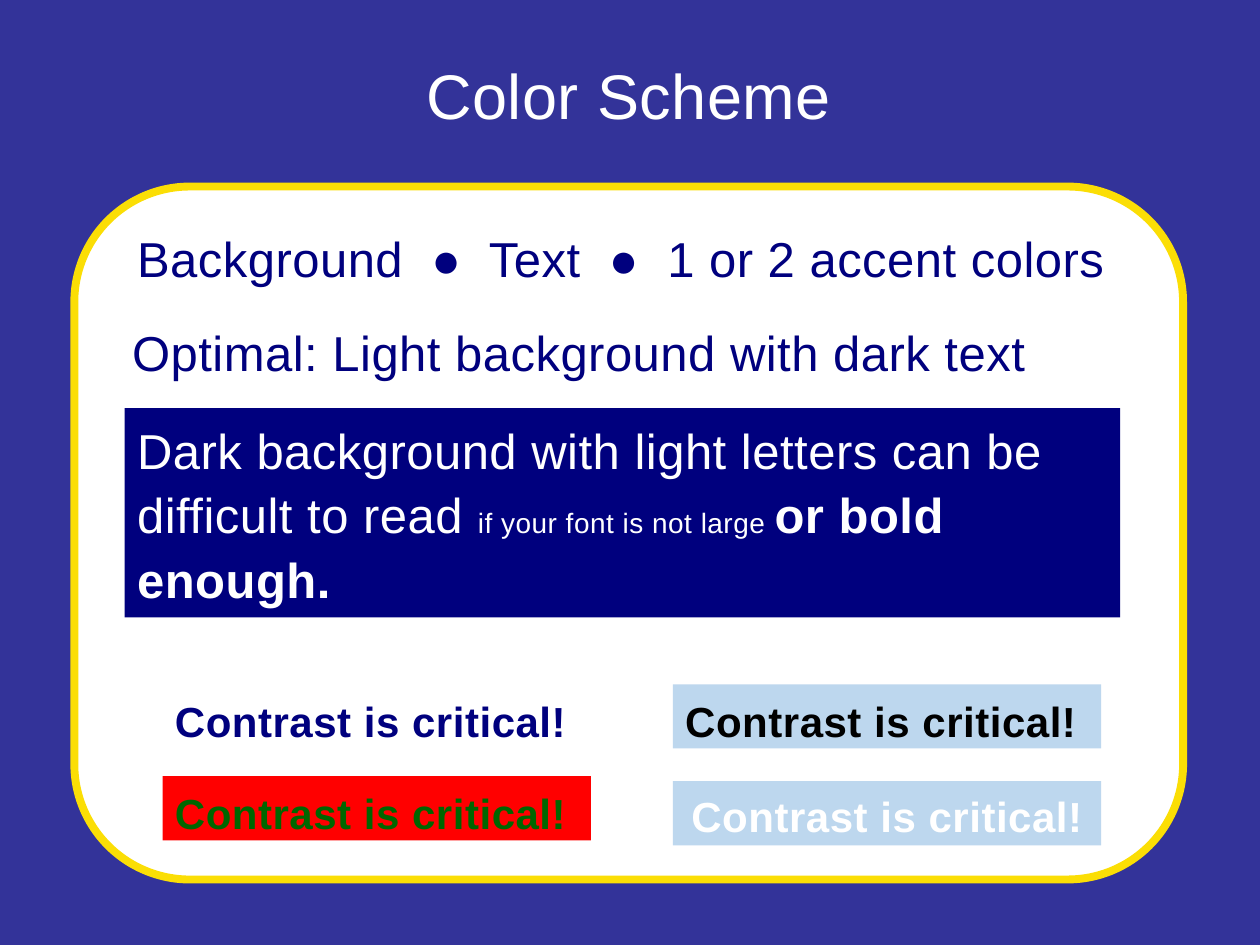
from pptx import Presentation
from pptx.dml.color import RGBColor
from pptx.enum.shapes import MSO_SHAPE
from pptx.enum.text import MSO_ANCHOR, MSO_AUTO_SIZE, PP_ALIGN
from pptx.util import Pt

BLUE = RGBColor(0x33, 0x33, 0x99)
NAVY = RGBColor(0x00, 0x00, 0x7E)
WHITE = RGBColor(0xFF, 0xFF, 0xFF)
BLACK = RGBColor(0x00, 0x00, 0x00)
GOLD = RGBColor(0xFB, 0xDE, 0x05)
RED = RGBColor(0xFF, 0x00, 0x00)
GREEN = RGBColor(0x00, 0x66, 0x00)
PALE = RGBColor(0xBD, 0xD7, 0xEE)

TITLE = "Color Scheme"
LINES = [
    ("Background  ●  Text  ●  1 or 2 accent colors", (71.3, 123.8, 576, 44.6)),
    ("Optimal: Light background with dark text", (68.4, 177.1, 568.8, 44.6)),
]
DARK = [
    ("Dark background with light letters can be difficult to read ", 28, False),
    ("if your font is not large ", 16, False),
    ("or bold enough.", 28, True),
]
CLAIM = "Contrast is critical!"
LEFT, RIGHT = 92.9, 384.5
TESTS = [
    (LEFT, 391, None, NAVY, False),
    (LEFT, 443.5, RED, GREEN, False),
    (RIGHT, 391, PALE, BLACK, False),
    (RIGHT, 446.4, PALE, WHITE, True),
]


def add_box(slide, spot, fill=None, kind=MSO_SHAPE.RECTANGLE):
    place = [Pt(n) for n in spot]
    if fill is None:
        return slide.shapes.add_textbox(*place)
    box = slide.shapes.add_shape(kind, *place)
    box.shadow.inherit = False
    box.fill.solid()
    box.fill.fore_color.rgb = fill
    box.line.fill.background()
    return box


def write(box, runs, ink, gap, space=1.1, mid=False, deep=False):
    frame = box.text_frame
    frame.word_wrap = True
    frame.auto_size = MSO_AUTO_SIZE.SHAPE_TO_FIT_TEXT
    frame.vertical_anchor = MSO_ANCHOR.MIDDLE if deep else MSO_ANCHOR.TOP
    para = frame.paragraphs[0]
    para.alignment = PP_ALIGN.CENTER if mid else PP_ALIGN.LEFT
    para.space_before = Pt(gap)
    para.line_spacing = space
    for text, size, bold in runs:
        run = para.add_run()
        run.text = text
        font = run.font
        font.name = "Arial"
        font.size = Pt(size)
        font.bold = bold
        font.color.rgb = ink
        run._r.get_or_add_rPr().set("spc", "30")


def main():
    deck = Presentation()
    deck.slide_width, deck.slide_height = Pt(720), Pt(540)
    slide = deck.slides.add_slide(deck.slide_layouts[6])
    slide.background.fill.solid()
    slide.background.fill.fore_color.rgb = BLUE

    title = add_box(slide, (100.1, 28.8, 518.4, 51.1))
    write(title, [(TITLE, 36, False)], WHITE, 6, 1.0, mid=True)

    panel = add_box(slide, (42.5, 106.6, 633.6, 396), WHITE,
                    MSO_SHAPE.ROUNDED_RECTANGLE)
    panel.line.color.rgb = GOLD
    panel.line.width = Pt(4.5)

    for text, spot in LINES:
        write(add_box(slide, spot), [(text, 28, False)], NAVY, 18)

    dark = add_box(slide, (71.3, 233.3, 568.8, 119.5), NAVY)
    write(dark, DARK, WHITE, 6)

    for left, top, fill, ink, mid in TESTS:
        box = add_box(slide, (left, top, 244.8, 36.7), fill)
        write(box, [(CLAIM, 24, True)], ink, 18, mid=mid, deep=mid)

    deck.save("out.pptx")


if __name__ == "__main__":
    main()
